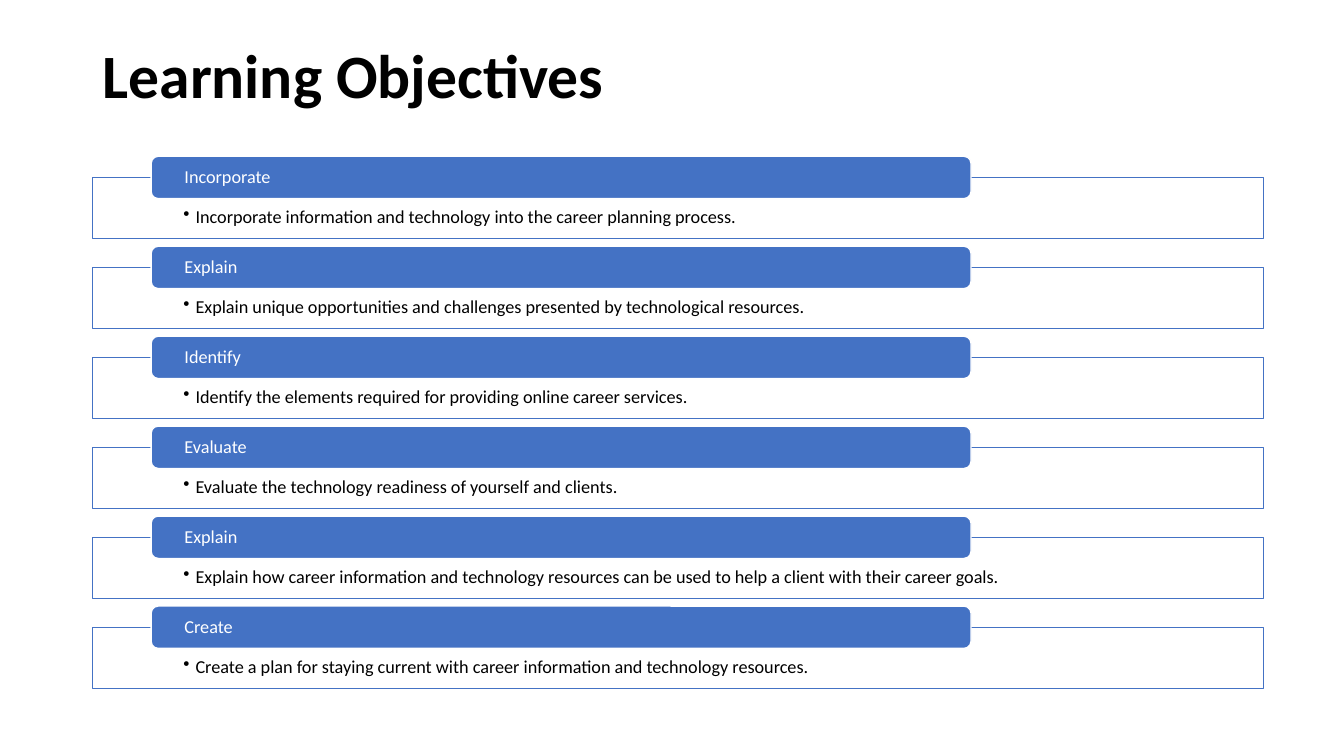
from dataclasses import dataclass

from lxml import etree
from pptx import Presentation
from pptx.dml.color import RGBColor
from pptx.enum.shapes import MSO_SHAPE
from pptx.enum.text import MSO_ANCHOR, PP_ALIGN
from pptx.oxml.ns import qn
from pptx.util import Inches, Pt

RECT = MSO_SHAPE.RECTANGLE
ROUNDED = MSO_SHAPE.ROUNDED_RECTANGLE
TOP, MIDDLE = MSO_ANCHOR.TOP, MSO_ANCHOR.MIDDLE
LEFT = PP_ALIGN.LEFT

COLORS = {"accent": "4472C4", "paper": "FFFFFF", "ink": "000000"}
FONT = "Calibri"

WIDTH, HEIGHT = Inches(13.33), Inches(7.5)
COLUMN, ROW = WIDTH / 100, HEIGHT / 100
FIRST_PANEL_ROW = 23.47
OBJECTIVE_PITCH = 11.9
TAB_RISE = 2.8


@dataclass(frozen=True)
class Area:
    column: float
    row: float
    columns: float
    rows: float

    def box(self) -> tuple[int, int, int, int]:
        return (round(self.column * COLUMN), round(self.row * ROW),
                round(self.columns * COLUMN), round(self.rows * ROW))


@dataclass(frozen=True)
class TextStyle:
    size: int
    color: str
    anchor: MSO_ANCHOR
    insets: tuple[float, float, float, float]
    bold: bool = False
    bulleted: bool = False


@dataclass(frozen=True)
class BoxStyle:
    geometry: MSO_SHAPE
    fill: str
    line: str
    text: TextStyle
    opacity: int = 100


@dataclass(frozen=True)
class Objective:
    verb: str
    detail: str


HEADING = TextStyle(44, "ink", TOP, (0.1, 0.05, 0.1, 0.05), bold=True)
PANEL = BoxStyle(RECT, "paper", "accent",
                 TextStyle(13, "ink", TOP, (0.9, 0.3, 0.9, 0.1), bulleted=True),
                 opacity=90)
TAB = BoxStyle(ROUNDED, "accent", "paper",
               TextStyle(13, "paper", MIDDLE, (0.31, 0, 0.31, 0)))

OBJECTIVES = [
    Objective("Incorporate", "Incorporate information and technology into the career planning process."),
    Objective("Explain", "Explain unique opportunities and challenges presented by technological resources."),
    Objective("Identify", "Identify the elements required for providing online career services."),
    Objective("Evaluate", "Evaluate the technology readiness of yourself and clients."),
    Objective("Explain", "Explain how career information and technology resources can be used to help "
                         "a client with their career goals."),
    Objective("Create", "Create a plan for staying current with career information and technology resources."),
]


def apply_format(target, values: dict) -> None:
    for name, value in values.items():
        setattr(target, name, value)


def color(name: str) -> RGBColor:
    return RGBColor.from_string(COLORS[name])


def write(frame, wording: str, style: TextStyle) -> None:
    left, top, right, bottom = map(Inches, style.insets)
    apply_format(frame, {"word_wrap": True, "vertical_anchor": style.anchor,
                         "margin_left": left, "margin_top": top,
                         "margin_right": right, "margin_bottom": bottom})
    paragraph = frame.paragraphs[0]
    apply_format(paragraph, {"alignment": LEFT, "line_spacing": 0.9})
    run = paragraph.add_run()
    run.text = wording
    apply_format(run.font, {"name": FONT, "size": Pt(style.size), "bold": style.bold})
    run.font.color.rgb = color(style.color)
    if style.bulleted:
        paragraph.level = 1
        properties = paragraph._p.get_or_add_pPr()
        properties.set("marL", str(Inches(0.12)))
        properties.set("indent", str(-Inches(0.12)))
        etree.SubElement(properties, qn("a:buChar")).set("char", "•")


def draw_box(slide, area: Area, wording: str, style: BoxStyle) -> None:
    box = slide.shapes.add_shape(style.geometry, *area.box())
    box.shadow.inherit = False
    box.fill.solid()
    box.fill.fore_color.rgb = color(style.fill)
    box.line.color.rgb = color(style.line)
    box.line.width = Pt(1)
    if style.opacity < 100:
        fill_color = box._element.spPr.find(qn("a:solidFill"))[0]
        etree.SubElement(fill_color, qn("a:alpha")).set("val", str(style.opacity * 1000))
    write(box.text_frame, wording, style.text)


def draw_objective(slide, objective: Objective, panel_row: float) -> None:
    draw_box(slide, Area(6.9, panel_row, 87.1, 8.07), objective.detail, PANEL)
    draw_box(slide, Area(11.25, panel_row - TAB_RISE, 61, 2 * TAB_RISE), objective.verb, TAB)


def main() -> None:
    deck = Presentation()
    apply_format(deck, {"slide_width": WIDTH, "slide_height": HEIGHT})
    slide = deck.slides.add_slide(deck.slide_layouts[6])
    heading = slide.shapes.add_textbox(*Area(6.9, 5.33, 86.25, 19.33).box())
    write(heading.text_frame, "Learning Objectives", HEADING)
    for index, objective in enumerate(OBJECTIVES):
        draw_objective(slide, objective, FIRST_PANEL_ROW + index * OBJECTIVE_PITCH)
    deck.save("out.pptx")


if __name__ == "__main__":
    main()
